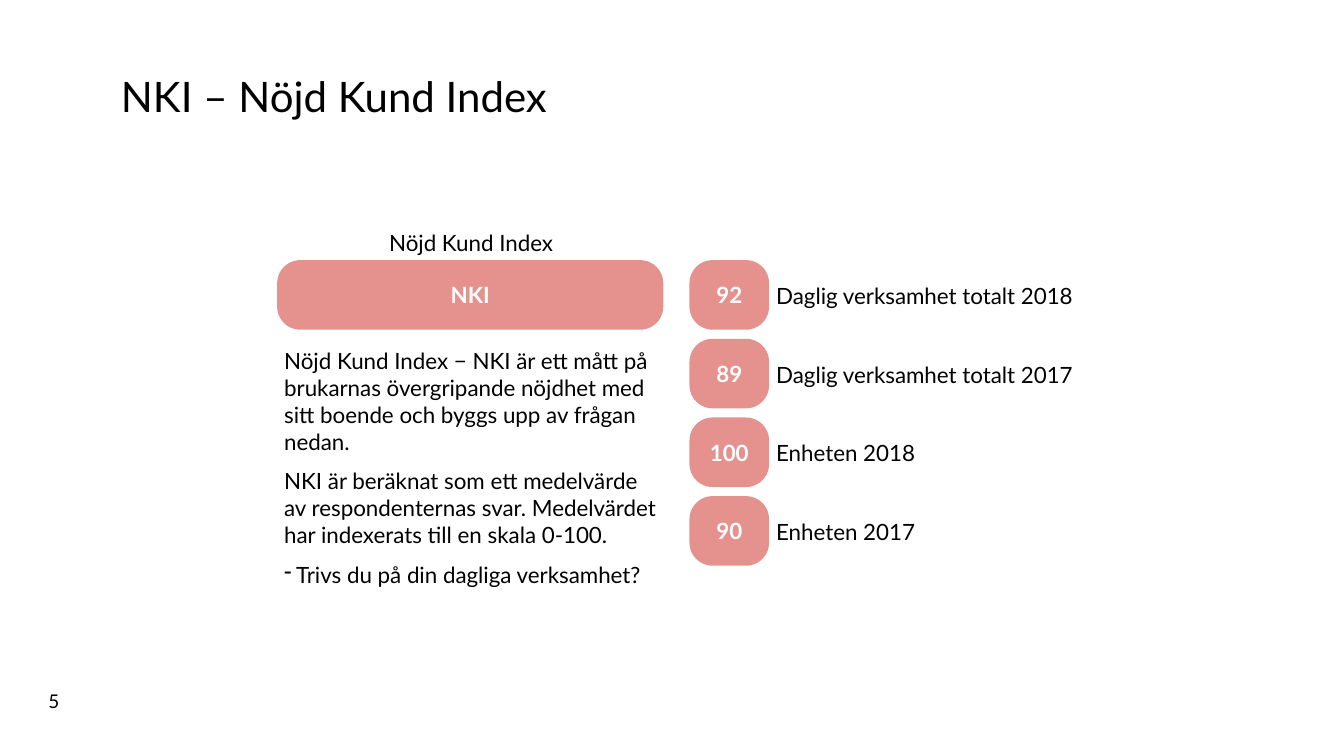
from lxml import etree
from pptx import Presentation
from pptx.dml.color import RGBColor
from pptx.enum import shapes, text
from pptx.oxml import ns
from pptx.util import Pt

TITLE = "NKI – Nöjd Kund Index"
PAGE = "5"
HEADING = "Nöjd Kund Index"
INDEX = "NKI"
BODY = [
    "Nöjd Kund Index − NKI är ett mått på brukarnas övergripande nöjdhet med "
    "sitt boende och byggs upp av frågan nedan.",
    "NKI är beräknat som ett medelvärde av respondenternas svar. "
    "Medelvärdet har indexerats till en skala 0-100.",
]
QUESTION = "Trivs du på din dagliga verksamhet?"
SCORES = [
    ("92", "Daglig verksamhet totalt 2018"),
    ("89", "Daglig verksamhet totalt 2017"),
    ("100", "Enheten 2018"),
    ("90", "Enheten 2017"),
]

BLACK = RGBColor(0, 0, 0)
WHITE = RGBColor(255, 255, 255)
ROSE = RGBColor(0xE5, 0x92, 0x8E)

LEFT, TOP = 198, 185.8
PANEL_W, PILL_W, PILL_H = 275.8, 56.9, 49.7
PILL_X, PITCH = 492.5, 56.2
LABEL_X = PILL_X + PILL_W

LEFT_ALIGN, CENTER = text.PP_ALIGN.LEFT, text.PP_ALIGN.CENTER
TOP_ANCHOR, MIDDLE, BOTTOM = (
    text.MSO_ANCHOR.TOP, text.MSO_ANCHOR.MIDDLE, text.MSO_ANCHOR.BOTTOM)
TIGHT = (5, 3.6, 3.6, 2.9)
NORMAL = (7.2, 3.6, 7.2, 3.6)


def set_all(target, **values):
    for name, value in values.items():
        setattr(target, name, value)


def format_frame(tf, anchor, insets, wrap=True):
    left, top, right, bottom = map(Pt, insets)
    set_all(tf, word_wrap=wrap, vertical_anchor=anchor, margin_left=left,
            margin_top=top, margin_right=right, margin_bottom=bottom)


def write(p, words, size=16, color=BLACK, bold=False, align=LEFT_ALIGN):
    p.alignment = align
    r = p.add_run()
    r.text = words
    set_all(r.font, name="Lato", size=Pt(size), bold=bold)
    r.font.color.rgb = color


def add_text(s, box, words, anchor=TOP_ANCHOR, insets=TIGHT, wrap=True, **style):
    tf = s.shapes.add_textbox(*map(Pt, box)).text_frame
    format_frame(tf, anchor, insets, wrap)
    write(tf.paragraphs[0], words, **style)
    return tf


def add_pill(s, x, y, width, words):
    sp = s.shapes.add_shape(shapes.MSO_SHAPE.ROUNDED_RECTANGLE,
                            *map(Pt, (x, y, width, PILL_H)))
    sp.adjustments[0] = 0.333
    sp.shadow.inherit = False
    sp.fill.solid()
    sp.fill.fore_color.rgb = ROSE
    sp.line.fill.background()
    format_frame(sp.text_frame, MIDDLE, NORMAL)
    write(sp.text_frame.paragraphs[0], words, color=WHITE, bold=True, align=CENTER)


def add_dash(p):
    pPr = p._p.get_or_add_pPr()
    pPr.set("marL", str(Pt(8.6)))
    pPr.set("indent", str(-Pt(8.6)))
    etree.SubElement(pPr, ns.qn("a:buChar")).set("char", "-")


def main():
    prs = Presentation()
    set_all(prs, slide_width=Pt(960), slide_height=Pt(540))
    s = prs.slides.add_slide(prs.slide_layouts[5])

    title = s.shapes.title
    set_all(title, left=Pt(79.2), top=Pt(45.4), width=Pt(819.4), height=Pt(45.4))
    format_frame(title.text_frame, BOTTOM, NORMAL)
    p = title.text_frame.paragraphs[0]
    p.line_spacing = 0.9
    write(p, TITLE, size=30)

    add_text(s, (27.4, 488.9, 31, 23.8), PAGE, insets=NORMAL, wrap=False, size=13.5)
    add_text(s, (LEFT, 159.8, PANEL_W, 26), HEADING, align=CENTER)
    add_pill(s, LEFT, TOP, PANEL_W, INDEX)

    tf = add_text(s, (LEFT, 244.7, PANEL_W, 206), BODY[0])
    for words in BODY[1:] + [QUESTION]:
        p = tf.add_paragraph()
        p.space_before = Pt(9)
        if words == QUESTION:
            add_dash(p)
        write(p, words)

    for i, (score, label) in enumerate(SCORES):
        y = TOP + i * PITCH
        add_pill(s, PILL_X, y, PILL_W, score)
        add_text(s, (LABEL_X, y, 301.7, PILL_H), label, anchor=MIDDLE)

    prs.save("out.pptx")


if __name__ == "__main__":
    main()
